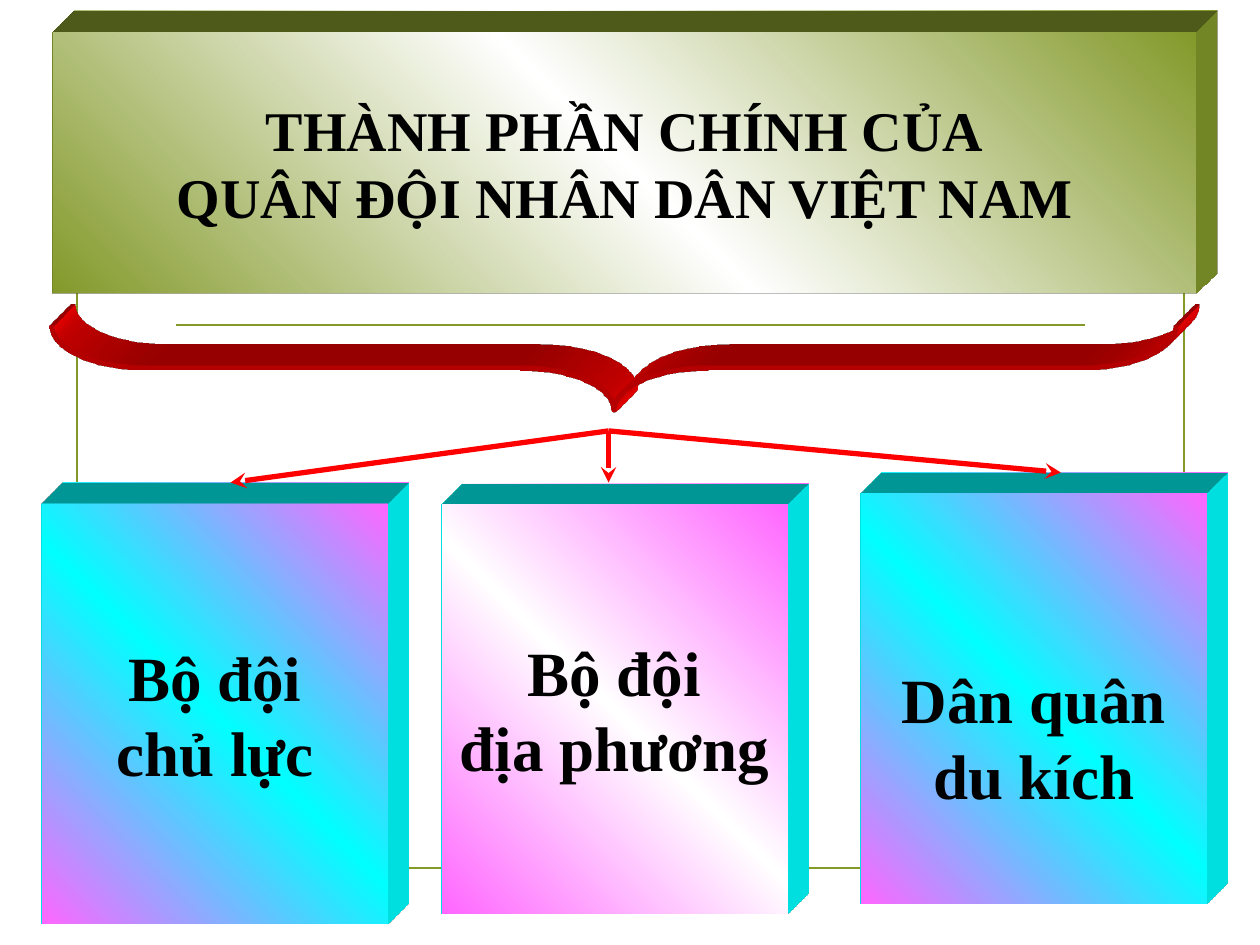
from copy import deepcopy

from lxml import etree
from pptx import Presentation
from pptx.dml.color import RGBColor
from pptx.enum import shapes, text
from pptx.oxml import parse_xml
from pptx.oxml.ns import nsdecls, qn
from pptx.util import Inches, Pt

OLIVE = RGBColor(0x83, 0x99, 0x2A)
WHITE = RGBColor(0xFF, 0xFF, 0xFF)
BLACK = RGBColor(0x00, 0x00, 0x00)
PINK = RGBColor(0xFF, 0x66, 0xFF)
CYAN = RGBColor(0x00, 0xFF, 0xFF)
RED = RGBColor(0xFF, 0x00, 0x00)

TITLE_LINES = ["THÀNH PHẦN CHÍNH CỦA", "QUÂN ĐỘI NHÂN DÂN VIỆT NAM"]
FORCES = [
    ((0.33, 4, 2.75, 3.33), CYAN, ["Bộ đội", "chủ lực"], 0.05),
    ((3.5, 4, 2.75, 3.25), WHITE, ["Bộ đội", "địa phương"], 0.05),
    ((6.83, 3.92, 2.75, 3.25), CYAN, ["Dân quân", "du kích"], 0.65),
]
ARROW_START = (4.83, 3.42)
ARROW_ENDS = [(1.83, 3.83), (4.83, 3.83), (8.42, 3.75)]


def add_outline(slide, kind, box, color, width):
    """Add an unfilled shape with a coloured outline."""
    shape = slide.shapes.add_shape(kind, *map(Inches, box))
    shape.shadow.inherit = False
    shape.fill.background()
    shape.line.color.rgb = color
    shape.line.width = Pt(width)
    return shape


def add_line(slide, start, end, color, width):
    """Add a straight line without a shadow."""
    line = slide.shapes.add_connector(
        shapes.MSO_CONNECTOR.STRAIGHT, *map(Inches, start + end))
    line.line.color.rgb = color
    line.line.width = Pt(width)
    etree.SubElement(line._element.spPr, qn("a:effectLst"))
    return line


def extrude(shape, color):
    """Give a shape an oblique depth in the given colour."""
    properties = shape._element.spPr
    properties.append(parse_xml(
        f'<a:scene3d {nsdecls("a")}><a:camera prst="legacyObliqueTopRight"/>'
        '<a:lightRig rig="legacyFlat3" dir="b"/></a:scene3d>'))
    properties.append(parse_xml(
        f'<a:sp3d {nsdecls("a")} extrusionH="430200" prstMaterial="legacyMatte">'
        '<a:bevelT w="13500" h="13500" prst="angle"/>'
        '<a:bevelB w="13500" h="13500" prst="angle"/>'
        f'<a:extrusionClr><a:srgbClr val="{color}"/></a:extrusionClr></a:sp3d>'))


def fill_gradient(shape, edge, middle):
    """Fill a shape diagonally from edge colour to middle colour and back."""
    shape.fill.gradient()
    shape.fill.gradient_angle = 45
    stops = shape._element.spPr.find(".//" + qn("a:gsLst"))
    stops.append(deepcopy(stops[-1]))
    for stop, color, position in zip(
            shape.fill.gradient_stops, (edge, middle, edge), (0, 0.5, 1)):
        stop.color.rgb = color
        stop.position = position


def add_block(slide, box, edge, middle, depth_color, lines, size, margin_top=0.05):
    """Add an extruded gradient block with centred bold lines."""
    block = slide.shapes.add_shape(
        shapes.MSO_SHAPE.RECTANGLE, *map(Inches, box))
    block.shadow.inherit = False
    block.line.fill.background()
    fill_gradient(block, edge, middle)
    extrude(block, depth_color)
    frame = block.text_frame
    frame_format = {"word_wrap": False, "margin_top": Inches(margin_top),
                    "vertical_anchor": text.MSO_ANCHOR.MIDDLE}
    for name, value in frame_format.items():
        setattr(frame, name, value)
    font_format = {"name": "Times New Roman", "size": Pt(size), "bold": True}
    for index, words in enumerate(lines):
        paragraph = frame.add_paragraph() if index else frame.paragraphs[0]
        paragraph.alignment = text.PP_ALIGN.CENTER
        run = paragraph.add_run()
        run.text = words
        for name, value in font_format.items():
            setattr(run.font, name, value)
        run.font.color.rgb = BLACK


def add_background(slide, box):
    """Draw the olive frame and its divider."""
    left, top, width, _ = box
    add_outline(slide, shapes.MSO_SHAPE.RECTANGLE, box, OLIVE, 1.25)
    add_line(slide, (left + 0.79, top + 1.99),
             (left + width - 0.79, top + 1.99), OLIVE, 1.25)


def add_brace(slide, box):
    """Draw the extruded brace turned to point downwards."""
    brace = add_outline(slide, shapes.MSO_SHAPE.RIGHT_BRACE, box, RED, 3)
    brace.rotation = 90
    brace.adjustments[0] = 1.115
    brace.adjustments[1] = 0.5
    extrude(brace, RED)


def add_arrows(slide, start, ends):
    """Draw red arrows from one point to every end."""
    for end in ends:
        arrow = add_line(slide, start, end, RED, 3)
        outline = arrow.line._get_or_add_ln()
        etree.SubElement(outline, qn("a:tailEnd"), type="stealth")


def main():
    """Build and save the slide."""
    presentation = Presentation()
    presentation.slide_width = Inches(10)
    presentation.slide_height = Inches(7.5)
    slide = presentation.slides.add_slide(presentation.slide_layouts[6])
    add_background(slide, (0.61, 0.59, 8.79, 6.3))
    add_block(slide, (0.42, 0.25, 9.08, 2.08), OLIVE, WHITE, OLIVE, TITLE_LINES, 32)
    for box, middle, lines, margin_top in FORCES:
        add_block(slide, box, PINK, middle, CYAN, lines, 36, margin_top)
    add_brace(slide, (4.54, -1.54, 0.67, 8.92))
    add_arrows(slide, ARROW_START, ARROW_ENDS)
    presentation.save("out.pptx")


if __name__ == "__main__":
    main()
